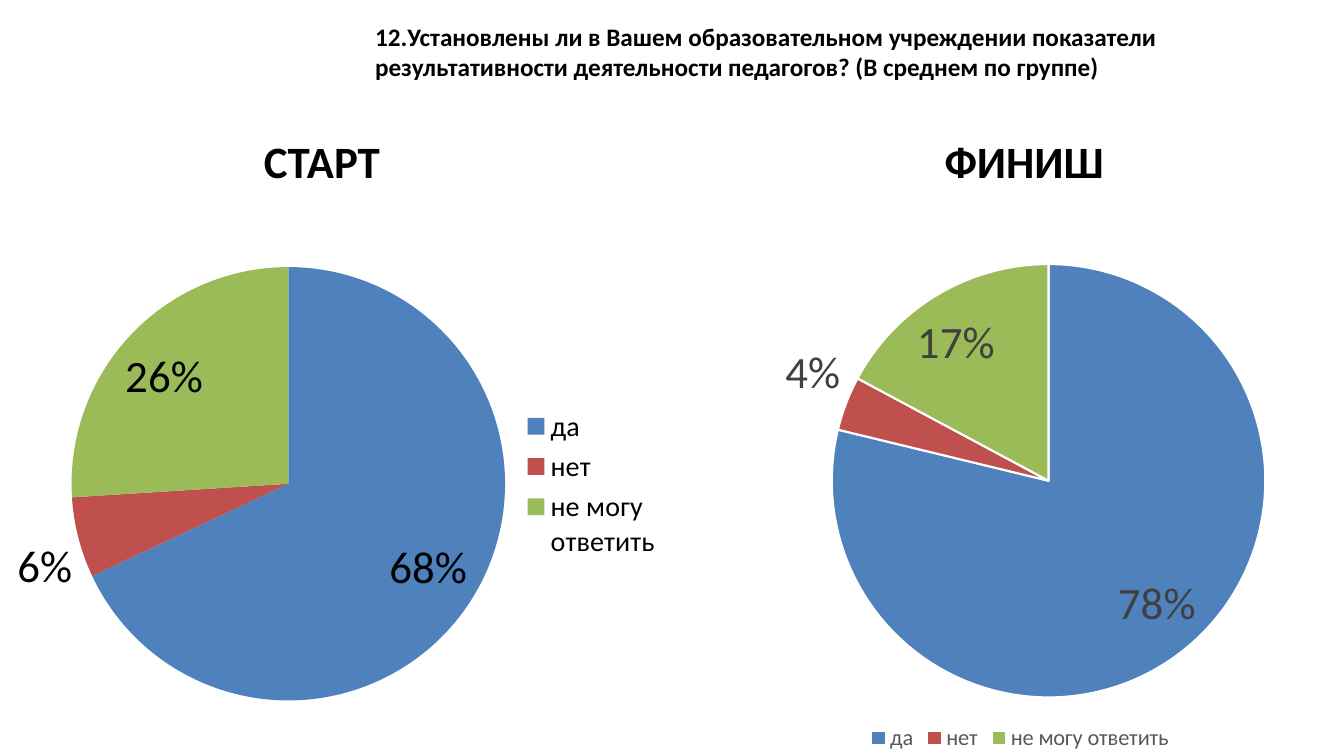
from lxml import etree
from pptx import Presentation
from pptx import util as u
from pptx.chart.data import CategoryChartData
from pptx.dml.color import RGBColor
from pptx.enum import chart as ch, text
from pptx.oxml.ns import qn

ANSWERS = ["да", "нет", "не могу ответить"]
ANSWER_COLORS = ["4F81BD", "C0504D", "9BBB59"]


def color(hex_string):
    return RGBColor.from_string(hex_string)


class SurveySlide:
    font_name = "Calibri"
    ink = "000000"

    def __init__(self, presentation):
        self.slide = presentation.slides.add_slide(presentation.slide_layouts[5])

    def style(self, font, size, ink=None, bold=False):
        font.name, font.size, font.bold = self.font_name, u.Pt(size), bold
        font.color.rgb = color(ink or self.ink)

    def title(self, wording, box):
        question = self.slide.shapes.title
        question.left, question.top, question.width, question.height = map(u.Inches, box)
        frame = question.text_frame
        frame.text = wording
        frame.word_wrap = True
        frame.auto_size = text.MSO_AUTO_SIZE.NONE
        frame.vertical_anchor = text.MSO_ANCHOR.TOP
        frame.paragraphs[0].alignment = text.PP_ALIGN.LEFT
        self.style(frame.paragraphs[0].font, 18, bold=True)

    def heading(self, wording, box):
        frame = self.slide.shapes.add_textbox(*map(u.Inches, box)).text_frame
        frame.text = wording
        frame.word_wrap = False
        frame.auto_size = text.MSO_AUTO_SIZE.SHAPE_TO_FIT_TEXT
        self.style(frame.paragraphs[0].font, 32, bold=True)

    def pie(self, shares, box, center, legend_side, legend_size,
            legend_ink=None, label_ink=None, outline=None):
        data = CategoryChartData(number_format='0"%"')
        data.categories = ANSWERS
        data.add_series("Series 1", shares)
        chart = self.slide.shapes.add_chart(
            ch.XL_CHART_TYPE.PIE, *map(u.Inches, box), data).chart
        chart.has_title = False
        self.style(chart.font, 10)

        # Legend
        chart.has_legend = True
        chart.legend.position = legend_side
        chart.legend.include_in_layout = False
        self.style(chart.legend.font, legend_size, legend_ink)

        # Slices and their labels
        plot = chart.plots[0]
        plot.vary_by_categories = True
        for index, fill in enumerate(ANSWER_COLORS):
            slice_format = plot.series[0].points[index].format
            slice_format.fill.solid()
            slice_format.fill.fore_color.rgb = color(fill)
            if outline:
                slice_format.line.color.rgb = color(outline)
                slice_format.line.width = u.Pt(1.5)
            else:
                slice_format.line.fill.background()
        labels = plot.series[0].data_labels
        labels.show_value = True
        labels.show_percentage = False
        labels.number_format, labels.number_format_is_linked = '0"%"', False
        labels.position = ch.XL_LABEL_POSITION.BEST_FIT
        self.style(labels.font, 32, label_ink)
        self.place_pie(chart, box, center)

    def place_pie(self, chart, box, center, radius=2.15):
        left, top, width, height = box
        area = chart.element.find(".//" + qn("c:plotArea"))
        layout = area.find(qn("c:layout"))
        if layout is None:
            layout = etree.Element(qn("c:layout"))
            area.insert(0, layout)
        manual = etree.SubElement(layout, qn("c:manualLayout"))
        settings = {
            "layoutTarget": "inner", "xMode": "edge", "yMode": "edge",
            "x": (center[0] - radius - left) / width,
            "y": (center[1] - radius - top) / height,
            "w": 2 * radius / width, "h": 2 * radius / height,
        }
        for tag, value in settings.items():
            etree.SubElement(manual, qn("c:" + tag)).set("val", str(value))


def main():
    presentation = Presentation()
    presentation.slide_width = u.Inches(13.33)
    presentation.slide_height = u.Inches(7.5)
    survey = SurveySlide(presentation)

    # Question
    survey.title("12.Установлены ли в Вашем образовательном учреждении показатели "
                 "результативности деятельности педагогов? (В среднем по группе)",
                 (3.62, 0.16, 9.45, 1.01))

    # Answers at the start
    survey.pie([68, 6, 26], (0, 2.1, 6.67, 5.4), (2.86, 4.8),
               ch.XL_LEGEND_POSITION.RIGHT, 20)
    survey.heading("СТАРТ", (2.52, 1.28, 1.36, 0.64))

    # Answers at the finish
    survey.heading("ФИНИШ", (9.27, 1.28, 1.8, 0.64))
    survey.pie([78, 4, 17], (6.9, 2.03, 6.44, 5.47), (10.4, 4.77),
               ch.XL_LEGEND_POSITION.BOTTOM, 16, "595959", "404040", "FFFFFF")

    presentation.save("out.pptx")


if __name__ == "__main__":
    main()
